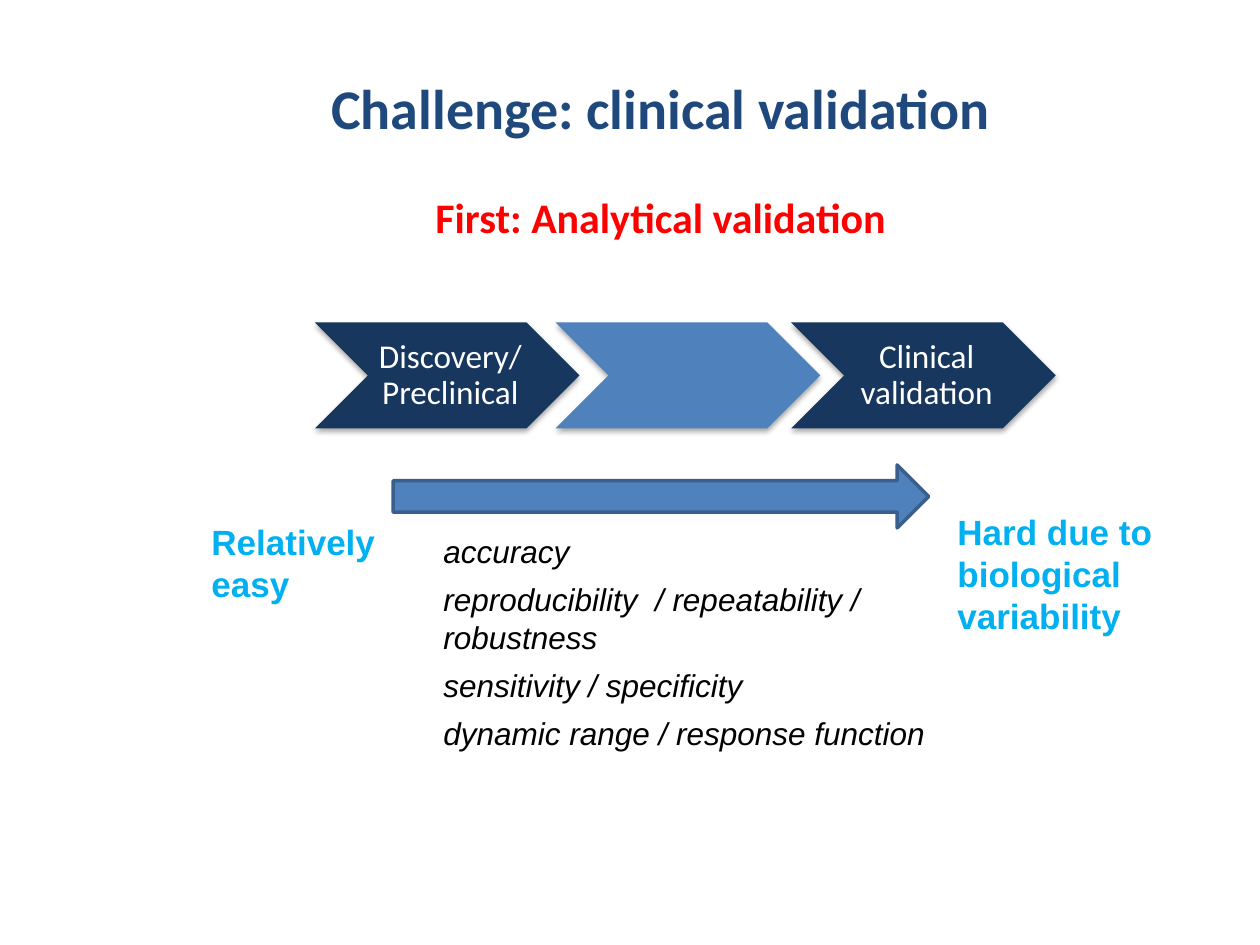
from lxml import etree
from pptx import Presentation
from pptx.dml.color import RGBColor
from pptx.enum import shapes, text
from pptx.oxml import ns
from pptx.util import Inches, Pt

TITLE_BLUE = RGBColor(0x1F, 0x49, 0x7D)
RED = RGBColor(0xFF, 0x00, 0x00)
NAVY = RGBColor(0x17, 0x37, 0x5E)
BLUE = RGBColor(0x4F, 0x81, 0xBD)
ARROW_OUTLINE = RGBColor(0x3A, 0x5F, 0x8C)
SKY = RGBColor(0x00, 0xB0, 0xF0)
BLACK = RGBColor(0x00, 0x00, 0x00)
WHITE = RGBColor(0xFF, 0xFF, 0xFF)

presentation = Presentation()
presentation.slide_width, presentation.slide_height = Inches(10), Inches(7.5)
slide = presentation.slides.add_slide(presentation.slide_layouts[6])


def add_text(left, top, width, height, lines, font_name, size, color,
             bold=False, italic=False):
    """Add a wrapping text box with one paragraph per line and return its frame."""
    box = slide.shapes.add_textbox(Inches(left), Inches(top), Inches(width), Inches(height))
    frame = box.text_frame
    frame.word_wrap = True
    frame.text = "\n".join(lines)
    for paragraph in frame.paragraphs:
        font = paragraph.font
        font.name, font.size = font_name, Pt(size)
        font.bold, font.italic = bold, italic
        font.color.rgb = color
    return frame


def add_soft_shadow(shape):
    effects = etree.SubElement(shape._element.spPr, ns.qn("a:effectLst"))
    shadow = etree.SubElement(effects, ns.qn("a:outerShdw"), blurRad=str(Pt(3.1)),
                              dist=str(Pt(1.8)), dir="5400000", rotWithShape="0")
    color = etree.SubElement(shadow, ns.qn("a:srgbClr"), val="000000")
    etree.SubElement(color, ns.qn("a:alpha"), val="35000")


# Title and subtitle
title = add_text(1.58, 0.5, 7.33, 1.5,
                 ["Challenge: clinical validation", "First: Analytical validation"],
                 "Calibri", 32, TITLE_BLUE, bold=True)
title.vertical_anchor = text.MSO_ANCHOR.MIDDLE
for paragraph in title.paragraphs:
    paragraph.alignment = text.PP_ALIGN.CENTER
subtitle = title.paragraphs[1]
subtitle.space_before = Pt(29)
subtitle.font.size = Pt(24)
subtitle.font.color.rgb = RED

# Analytical criteria
criteria = add_text(3.42, 4.17, 4.22, 1.87,
                    ["accuracy", "reproducibility  / repeatability / robustness",
                     "sensitivity / specificity", "dynamic range / response function"],
                    "Arial", 18, BLACK, italic=True)
for paragraph in criteria.paragraphs:
    paragraph.space_after = Pt(6)

# Process stages
STAGE_TOP, STAGE_WIDTH, STAGE_HEIGHT = 2.56, 2.1, 0.84
stages = [(2.5, NAVY, "Discovery/ Preclinical"),
          (4.41, BLUE, None),
          (6.28, NAVY, "Clinical validation")]
for left, color, label in stages:
    chevron = slide.shapes.add_shape(shapes.MSO_SHAPE.CHEVRON, Inches(left), Inches(STAGE_TOP),
                                     Inches(STAGE_WIDTH), Inches(STAGE_HEIGHT))
    chevron.fill.solid()
    chevron.fill.fore_color.rgb = color
    chevron.line.fill.background()
    add_soft_shadow(chevron)
    if label:
        frame = add_text(left + STAGE_HEIGHT / 2, STAGE_TOP, STAGE_WIDTH - STAGE_HEIGHT,
                         STAGE_HEIGHT, [label], "Calibri", 19, WHITE)
        frame.vertical_anchor = text.MSO_ANCHOR.MIDDLE
        frame.margin_left = Inches(0.08)
        frame.margin_top = frame.margin_right = frame.margin_bottom = Inches(0.03)
        frame.paragraphs[0].alignment = text.PP_ALIGN.CENTER
        frame.paragraphs[0].line_spacing = 0.9

# Arrow of growing difficulty
arrow = slide.shapes.add_shape(shapes.MSO_SHAPE.RIGHT_ARROW, Inches(3.12), Inches(3.69),
                               Inches(4.25), Inches(0.5))
arrow.shadow.inherit = False
arrow.fill.solid()
arrow.fill.fore_color.rgb = BLUE
arrow.line.color.rgb = ARROW_OUTLINE
arrow.line.width = Pt(2)

add_text(1.58, 4.08, 1.83, 0.77, ["Relatively easy"], "Arial", 20, SKY, bold=True)
add_text(7.5, 4, 2.29, 1.11, ["Hard due to biological variability"], "Arial", 20, SKY, bold=True)

presentation.save("out.pptx")
